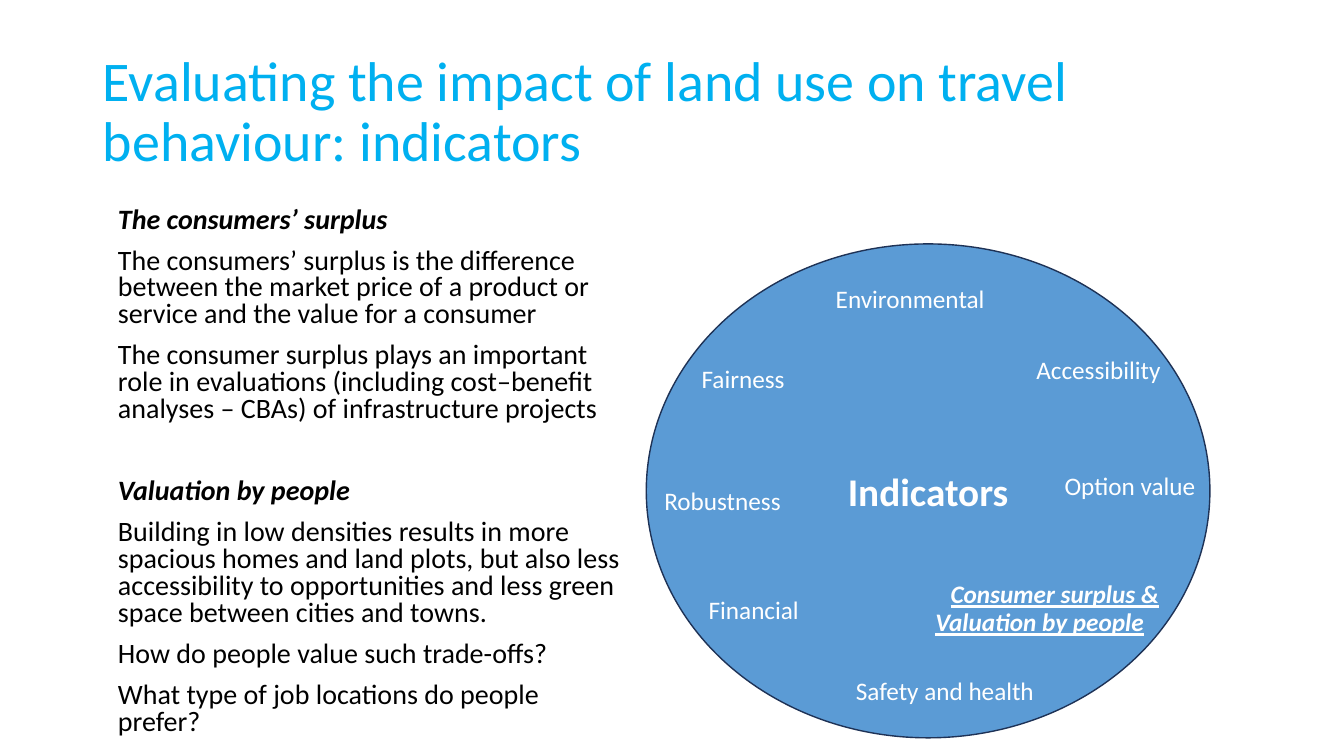
from lxml.etree import SubElement
from pptx import Presentation
from pptx.dml.color import RGBColor
from pptx.enum.shapes import MSO_SHAPE
from pptx.enum.text import MSO_ANCHOR, MSO_AUTO_SIZE, PP_ALIGN
from pptx.oxml.ns import qn
from pptx.util import Inches, Pt

PX = 9144
THEME = {
    "font": "Calibri",
    "title": RGBColor(0x00, 0xB0, 0xF0),
    "body": RGBColor(0x00, 0x00, 0x00),
    "ellipse": RGBColor(0x5B, 0x9B, 0xD5),
    "outline": RGBColor(0x1E, 0x32, 0x56),
    "label": RGBColor(0xFF, 0xFF, 0xFF),
    "title_size": Pt(40),
    "body_size": Pt(20),
    "center_size": Pt(28),
    "label_size": Pt(18),
}


def add_filled_shape(kind, left, top, width, height):
    shape = slide.shapes.add_shape(kind, left * PX, top * PX, width * PX, height * PX)
    shape.shadow.inherit = False
    shape.fill.solid()
    shape.fill.fore_color.rgb = THEME["ellipse"]
    shape.line.fill.background()
    return shape


def format_runs(paragraph, role, size, bold=False, italic=False, underline=False):
    for run in paragraph.runs:
        run.font.name = THEME["font"]
        run.font.size = THEME[size]
        run.font.color.rgb = THEME[role]
        run.font.bold = bold
        run.font.italic = italic
        run.font.underline = underline


presentation = Presentation()
presentation.slide_width, presentation.slide_height = Inches(13.33), Inches(7.5)
slide = presentation.slides.add_slide(presentation.slide_layouts[1])

title, body = slide.placeholders
for placeholder, left, top, width, height in [
    (title, 92, 40, 1150, 145),
    (body, 107, 201, 520, 549),
]:
    placeholder.left, placeholder.top = left * PX, top * PX
    placeholder.width, placeholder.height = width * PX, height * PX
    placeholder.text_frame.auto_size = MSO_AUTO_SIZE.NONE

title.text_frame.text = "Evaluating the impact of land use on travel behaviour: indicators"
title.text_frame.vertical_anchor = MSO_ANCHOR.MIDDLE
title_paragraph = title.text_frame.paragraphs[0]
title_paragraph.alignment = PP_ALIGN.LEFT
title_paragraph.line_spacing = 0.9
format_runs(title_paragraph, "title", "title_size")

sections = [
    ("The consumers’ surplus", [
        "The consumers’ surplus is the difference between the market price of a product or service and the value for a consumer",
        "The consumer surplus plays an important role in evaluations (including cost–benefit analyses – CBAs) of infrastructure projects",
    ]),
    ("Valuation by people", [
        "Building in low densities results in more spacious homes and land plots, but also less accessibility to opportunities and less green space between cities and towns.",
        "How do people value such trade-offs?",
        "What type of job locations do people prefer?",
    ]),
]
body.text_frame.text = "\n".join(
    line for heading, lines in sections for line in [heading, *lines])
headings = [heading for heading, lines in sections]
for paragraph in body.text_frame.paragraphs:
    is_heading = paragraph.text in headings
    paragraph.line_spacing = 0.8
    paragraph.space_before = Pt(39.5 if paragraph.text == headings[1] else 10)
    properties = paragraph._p.get_or_add_pPr()
    properties.set("marL", "0")
    properties.set("indent", "0")
    SubElement(properties, qn("a:buNone"))
    format_runs(paragraph, "body", "body_size", bold=is_heading, italic=is_heading)

ellipse = add_filled_shape(MSO_SHAPE.OVAL, 641, 242, 559, 490)
ellipse.line.color.rgb = THEME["outline"]
ellipse.line.width = Pt(1)
ellipse.text_frame.text = "Indicators"
ellipse.text_frame.vertical_anchor = MSO_ANCHOR.MIDDLE
ellipse.text_frame.paragraphs[0].alignment = PP_ALIGN.CENTER
format_runs(ellipse.text_frame.paragraphs[0], "label", "center_size", bold=True)

LABEL_HEIGHT = 40
filled_indicators = [
    ("Financial", 693, 585, 205),
    ("Safety and health", 839, 665, 205),
    ("Environmental", 819, 276, 205),
    ("Robustness", 649, 477, 150),
    ("Fairness", 686, 356, 205),
]
plain_indicators = [
    ("Accessibility", 1018, 347, 205),
    ("Option value", 1046, 462, 205),
    ("Consumer surplus &", 933, 569, 238),
    ("Valuation by people", 918, 597, 281),
]
emphasized = ["Consumer surplus &", "Valuation by people"]
for indicator in filled_indicators + plain_indicators:
    name, left, top, width = indicator
    if indicator in filled_indicators:
        label = add_filled_shape(MSO_SHAPE.RECTANGLE, left, top, width, LABEL_HEIGHT)
    else:
        label = slide.shapes.add_textbox(left * PX, top * PX, width * PX, LABEL_HEIGHT * PX)
    label.text_frame.word_wrap = True
    label.text_frame.auto_size = MSO_AUTO_SIZE.SHAPE_TO_FIT_TEXT
    label.text_frame.vertical_anchor = MSO_ANCHOR.TOP
    label.text_frame.text = name
    paragraph = label.text_frame.paragraphs[0]
    paragraph.alignment = PP_ALIGN.LEFT
    strong = name in emphasized
    format_runs(paragraph, "label", "label_size", bold=strong, italic=strong, underline=strong)

presentation.save("out.pptx")
